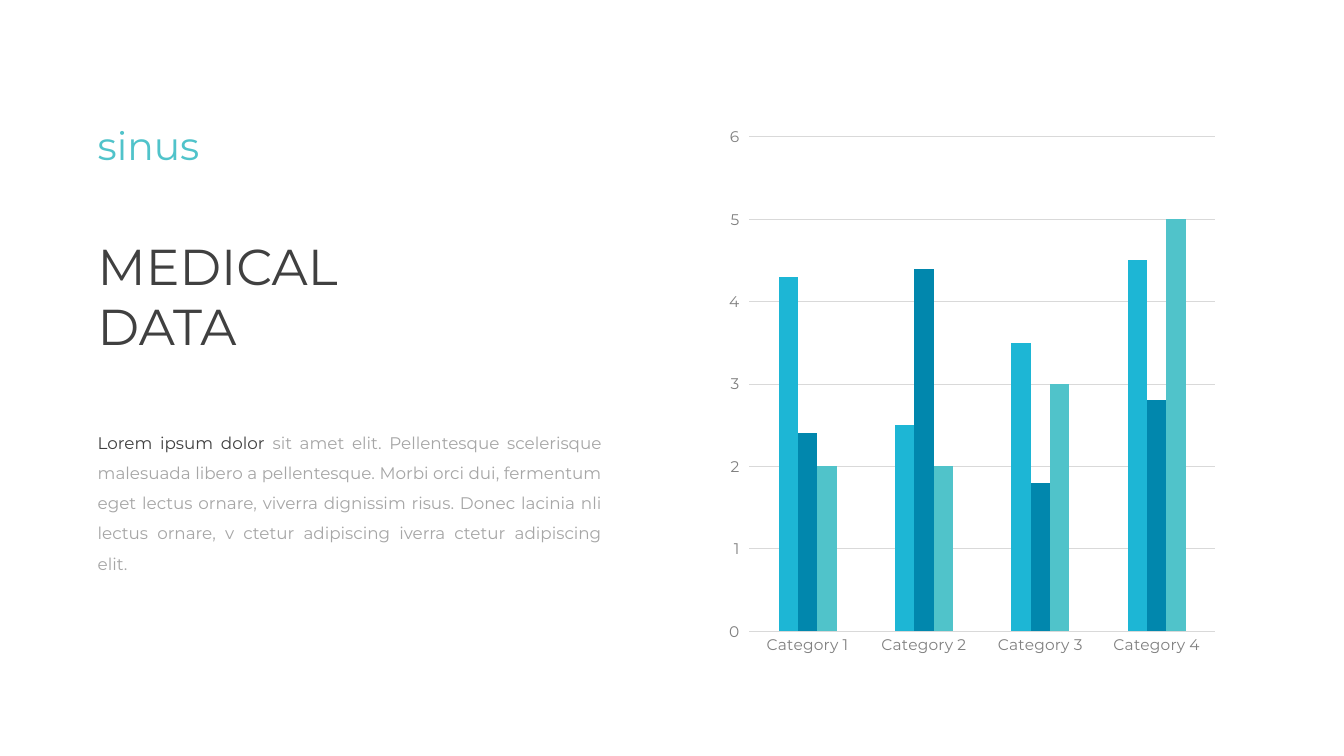
"""Build the medical data slide: three text blocks beside a clustered column chart."""
from dataclasses import dataclass

from pptx import Presentation
from pptx.chart.data import CategoryChartData
from pptx.dml.color import RGBColor
from pptx.enum.chart import XL_CHART_TYPE, XL_TICK_MARK
from pptx.enum.text import MSO_AUTO_SIZE, PP_ALIGN
from pptx.util import Inches, Pt

FONT = "Montserrat"
TEAL, DARK, GREY = "50C3CA", "404040", "A6A6A6"
AXIS_TEXT, GRID_LINE = "808080", "D9D9D9"
LEFT, TOP = 6.53, 15.33


@dataclass
class Box:
    left: float
    top: float
    width: float
    height: float


@dataclass
class TextBlock:
    box: Box
    paragraphs: list[list[tuple[str, str]]]
    size: int
    align: PP_ALIGN = PP_ALIGN.LEFT
    spacing: float = 1.0


@dataclass
class Series:
    name: str
    values: tuple[float, ...]
    color: str


TEXTS = [
    TextBlock(Box(LEFT, TOP, 29.33, 7.6), [[("sinus", TEAL)]], 28),
    TextBlock(Box(LEFT, 30.4, 29.33, 17.47), [[("MEDICAL", DARK)], [("DATA", DARK)]], 36),
    TextBlock(
        Box(LEFT, 55.2, 39, 17.07),
        [[
            ("Lorem ipsum dolor ", DARK),
            ("sit amet elit. Pellentesque scelerisque malesuada libero a pellentesque. "
             "Morbi orci dui, fermentum eget lectus ornare, viverra dignissim risus. "
             "Donec lacinia nli lectus ornare, v ctetur adipiscing iverra ctetur "
             "adipiscing elit.", GREY),
        ]],
        12, PP_ALIGN.JUSTIFY, 1.5,
    ),
]
CHART_BOX = Box(53.49, TOP, 37.66, 72.8)
CATEGORIES = [f"Category {n}" for n in range(1, 5)]
SERIES = [
    Series("Series 1", (4.3, 2.5, 3.5, 4.5), "1DB6D5"),
    Series("Series 2", (2.4, 4.4, 1.8, 2.8), "0187AD"),
    Series("Series 3", (2, 2, 3, 5), TEAL),
]


def rgb(color: str) -> RGBColor:
    return RGBColor.from_string(color)


def place(prs, box: Box) -> tuple[int, int, int, int]:
    """Turn percentages of the slide's size into lengths."""
    w, h = prs.slide_width / 100, prs.slide_height / 100
    return int(box.left * w), int(box.top * h), int(box.width * w), int(box.height * h)


def add_text(prs, s, block: TextBlock) -> None:
    tf = s.shapes.add_textbox(*place(prs, block.box)).text_frame
    tf.word_wrap = True
    tf.auto_size = MSO_AUTO_SIZE.SHAPE_TO_FIT_TEXT
    for i, runs in enumerate(block.paragraphs):
        p = tf.add_paragraph() if i else tf.paragraphs[0]
        p.alignment, p.line_spacing = block.align, block.spacing
        p.font.name, p.font.size = FONT, Pt(block.size)
        for text, color in runs:
            r = p.add_run()
            r.text = text
            r.font.color.rgb = rgb(color)


def style_axis(axis, tick: XL_TICK_MARK) -> None:
    axis.major_tick_mark, axis.minor_tick_mark = tick, XL_TICK_MARK.NONE
    font = axis.tick_labels.font
    font.name, font.size = FONT, Pt(11)
    font.color.rgb = rgb(AXIS_TEXT)


def style_line(line) -> None:
    line.color.rgb = rgb(GRID_LINE)
    line.width = Pt(0.75)


def add_columns(prs, s, box: Box) -> None:
    data = CategoryChartData()
    data.categories = CATEGORIES
    for series in SERIES:
        data.add_series(series.name, series.values)
    chart = s.shapes.add_chart(XL_CHART_TYPE.COLUMN_CLUSTERED, *place(prs, box), data).chart
    chart.has_legend = chart.has_title = False
    chart.font.name, chart.font.size = "Open Sans", Pt(9)
    chart.font.color.rgb = rgb("000000")

    plot = chart.plots[0]
    plot.gap_width, plot.overlap, plot.vary_by_categories = 300, 0, False
    for drawn, series in zip(plot.series, SERIES):
        drawn.format.fill.solid()
        drawn.format.fill.fore_color.rgb = rgb(series.color)

    style_axis(chart.category_axis, XL_TICK_MARK.NONE)
    style_line(chart.category_axis.format.line)
    values = chart.value_axis
    style_axis(values, XL_TICK_MARK.OUTSIDE)
    values.format.line.fill.background()
    values.minimum_scale, values.maximum_scale, values.major_unit = 0, 6, 1
    style_line(values.major_gridlines.format.line)


def main() -> None:
    prs = Presentation()
    prs.slide_width, prs.slide_height = Inches(13.33), Inches(7.5)
    s = prs.slides.add_slide(prs.slide_layouts[6])
    add_columns(prs, s, CHART_BOX)
    for block in TEXTS:
        add_text(prs, s, block)
    prs.save("out.pptx")


if __name__ == "__main__":
    main()
